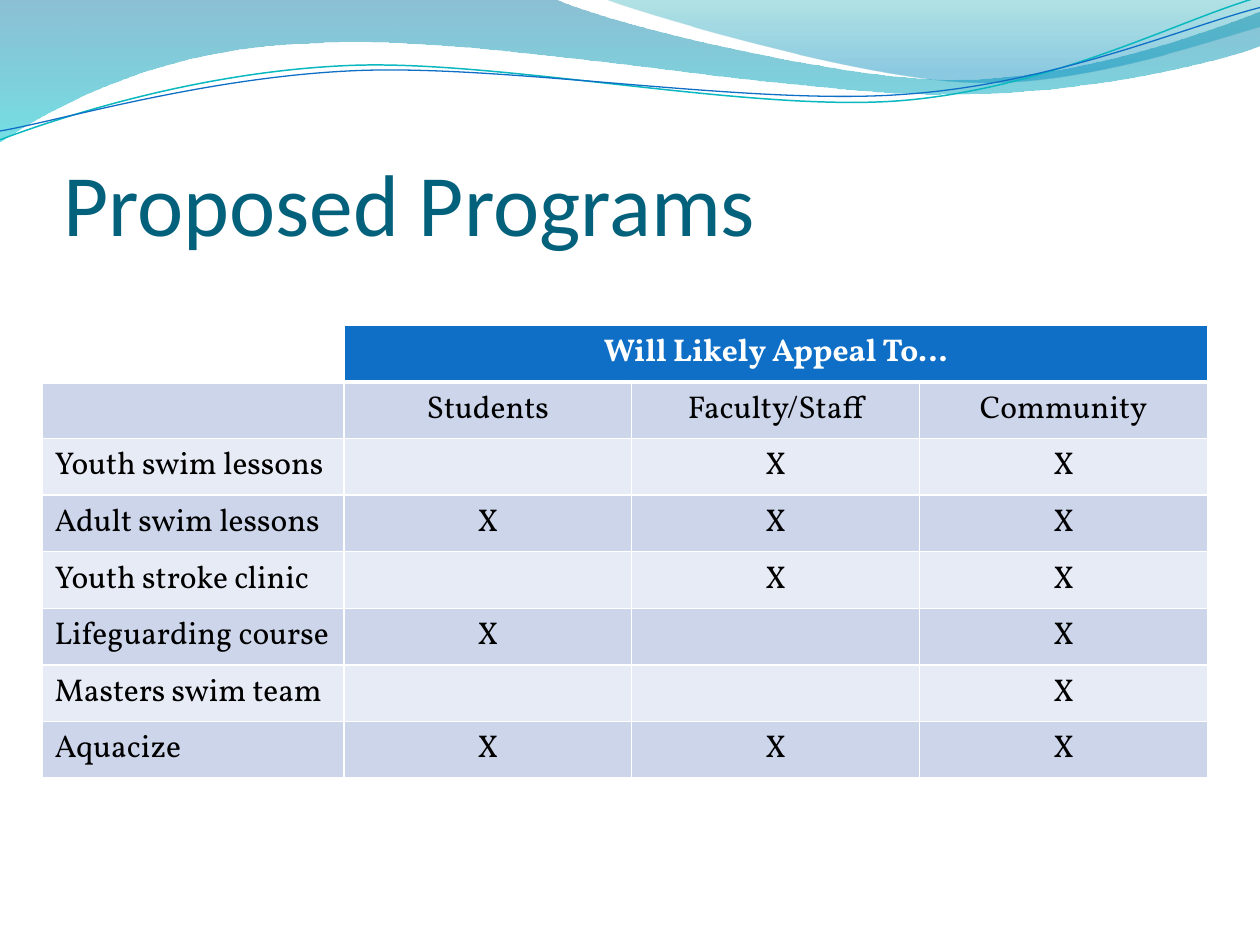
from pptx import Presentation
from pptx.dml.color import RGBColor as Rgb
from pptx.enum.text import MSO_ANCHOR as Anchor, PP_ALIGN as Align
from pptx.oxml.ns import qn
from pptx.util import Pt
from lxml.etree import SubElement as Sub, Element

theme = {
    "title": "04617B", "head": "0F6FC6", "dark": "CCD5EA", "light": "E7EBF5",
    "white": "FFFFFF", "black": "000000", "teal": "0AB8BF",
    "band": [(0, "0074A1", 45), (1, "00C6CF", 55)],
    "crest": [(0, "00A1A9", 30), (0.8, "008BBF", 45)],
    "big": 50, "body": 18, "sans": "Calibri", "serif": "Vollkorn",
}


def trace(path, closed):
    pts = [(Pt(seg[i]), Pt(seg[i + 1])) for seg in path for i in range(0, len(seg), 2)]
    pen = slide.shapes.build_freeform(*pts[0], scale=1.0)
    pen.add_line_segments(pts[1:], close=closed)
    shape = pen.convert_to_shape()
    shape.shadow.inherit = False
    steps = iter(shape._element.xpath(".//a:path/a:lnTo"))
    for seg in path[1:]:
        first = next(steps)
        if len(seg) == 6:
            first.tag = qn("a:cubicBezTo")
            for _ in range(2):
                step = next(steps)
                first.append(step[0])
                step.getparent().remove(step)
    return shape


def style(font, **form):
    font.color.rgb = Rgb.from_string(form.pop("color"))
    for key, val in form.items():
        setattr(font, key, val)


deck = Presentation()
deck.slide_width, deck.slide_height = Pt(720), Pt(540)
slide = deck.slides.add_slide(deck.slide_layouts[5])

waves = [
    ("band", [(0, 0), (316.8, -0.7), (342.7, 12.2, 478.1, 45.4, 545.8, 45.4),
              (614.2, 45.4, 689.8, 18.7, 720, 6.5), (720.7, 25.9),
              (707.8, 31.7, 626.4, 54.7, 537.1, 54), (447.8, 54, 275, 20.2, 185, 24.5),
              (92.9, 25.9, 33.1, 59.8, -0.7, 81.4), (0, 0)]),
    ("crest", [(344.9, -0.7), (366.5, 7.9, 491, 44.6, 553.7, 46.8),
               (616.3, 49.7, 691.9, 23, 720, 15.1), (720, 0), (344.9, -0.7)]),
]
for name, path in waves:
    wave = trace(path, True)
    wave.line.fill.background()
    wave.fill.gradient()
    wave.fill.gradient_angle = 270
    for stop, (pos, color, _) in zip(wave.fill.gradient_stops, theme[name]):
        stop.position = pos
        stop.color.rgb = Rgb.from_string(color)
    tints = wave._element.xpath("./p:spPr/a:gradFill//a:srgbClr")
    for tint, (_, _, alpha) in zip(tints, theme[name]):
        Sub(tint, qn("a:alpha"), val=str(alpha * 1000))

lines = [
    ("teal", 0.85, [(-1.4, 62.9), (33.7, 51.6, 114, 29.4, 199.8, 29.9),
                    (284.8, 30.3, 425.8, 67.2, 512.4, 64.9), (599, 62.4, 676.4, 25.7, 720.2, 15.6)]),
    ("head", 0.75, [(-1.1, 57.9), (33, 53.7, 118.3, 32.5, 204, 33),
                    (290.5, 33.5, 428.9, 63.8, 515.5, 61.3), (601.4, 59.6, 678.5, 30.1, 721.4, 21.3)]),
]
for color, width, path in lines:
    curve = trace(path, False)
    curve.rotation = 357.3
    curve.fill.background()
    curve.line.color.rgb = Rgb.from_string(theme[color])
    curve.line.width = Pt(width)

title = slide.shapes.title
slide.shapes._spTree.append(title._element)
place = dict(left=Pt(36), top=Pt(55.4), width=Pt(648), height=Pt(90))
for key, val in place.items():
    setattr(title, key, val)
frame = title.text_frame
frame.text = "Proposed Programs"
form = dict(vertical_anchor=Anchor.BOTTOM, margin_left=0, margin_top=Pt(3.6),
            margin_right=0, margin_bottom=0, word_wrap=True)
for key, val in form.items():
    setattr(frame, key, val)
frame.paragraphs[0].alignment = Align.LEFT
style(frame.paragraphs[0].font, color=theme["title"], size=Pt(theme["big"]), name=theme["sans"])

rows = [
    ("", "Will Likely Appeal To…", "", ""),
    ("", "Students", "Faculty/Staff", "Community"),
    ("Youth swim lessons", "", "X", "X"),
    ("Adult swim lessons", "X", "X", "X"),
    ("Youth stroke clinic", "", "X", "X"),
    ("Lifeguarding course", "X", "", "X"),
    ("Masters swim team", "", "", "X"),
    ("Aquacize", "X", "X", "X"),
]
table = slide.shapes.add_table(8, 4, Pt(24), Pt(186), Pt(666), Pt(230.4)).table
table.first_row = table.horz_banding = False
for col, width in zip(table.columns, (172.5, 164.5, 164.5, 164.5)):
    col.width = Pt(width)
table.cell(0, 1).merge(table.cell(0, 3))

for r, row in enumerate(rows):
    for c, text in enumerate(row):
        cell = table.cell(r, c)
        if r == 0 and c == 0:
            cell.fill.background()
        else:
            shade = "head" if r == 0 else "dark" if r % 2 else "light"
            cell.fill.solid()
            cell.fill.fore_color.rgb = Rgb.from_string(theme[shade])
        props = cell._tc.get_or_add_tcPr()
        for i, side in enumerate("LRTB"):
            thick = (r, side) in ((0, "B"), (1, "T"))
            edge = Element(qn("a:ln" + side), w=str(Pt(3 if thick else 1)))
            Sub(Sub(edge, qn("a:solidFill")), qn("a:srgbClr"), val=theme["white"])
            props.insert(i, edge)
        if text:
            cell.text = text
            para = cell.text_frame.paragraphs[0]
            para.alignment = Align.CENTER if c else Align.LEFT
            style(para.font, color=theme["black" if r else "white"], bold=r == 0,
                  size=Pt(theme["body"]), name=theme["serif"])

deck.save("out.pptx")
